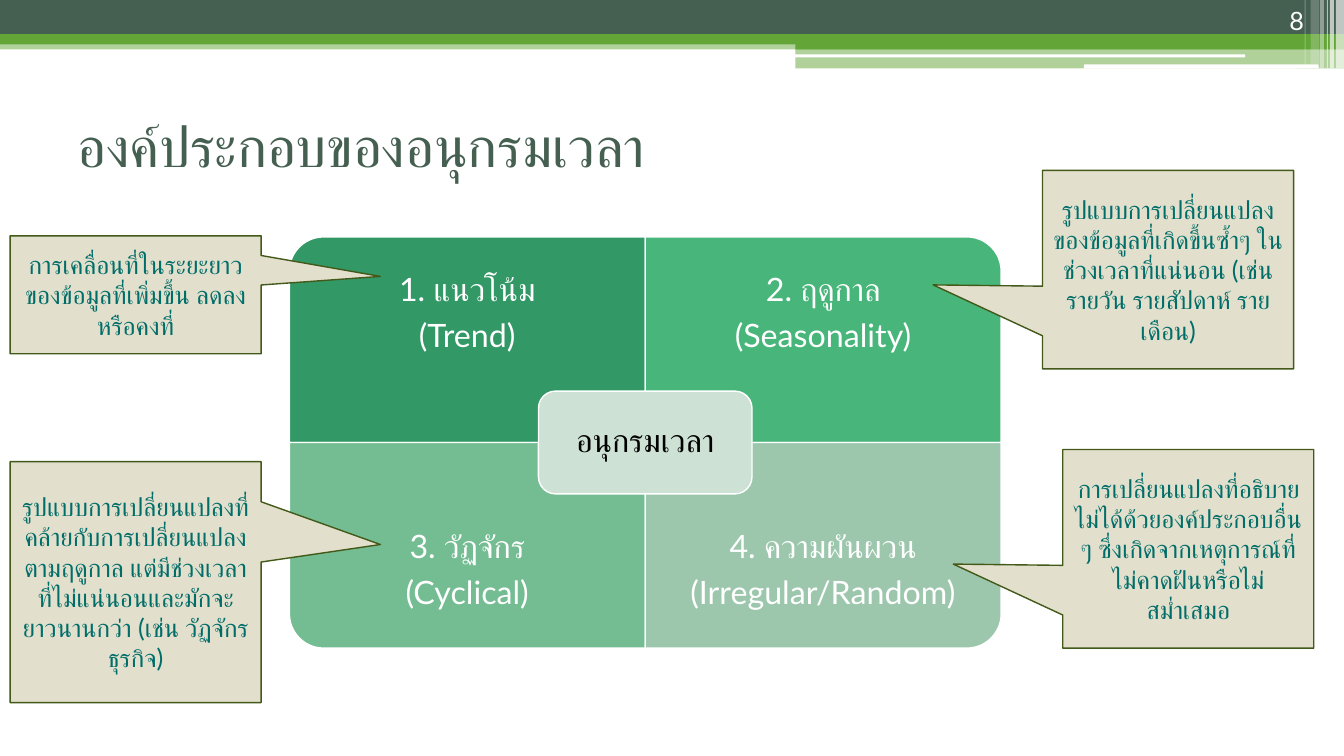
from lxml import etree
from pptx import Presentation
from pptx import util as u
from pptx.dml import color
from pptx.enum import shapes, text
from pptx.oxml import ns

SLIDE_W, SLIDE_H = 13.33, 7.5
FONT = "Lato"
WHITE, DARK, GREEN = "FFFFFF", "455F51", "63A537"
SHAPE = shapes.MSO_SHAPE
ALIGN = text.PP_ALIGN
ANCHOR = text.MSO_ANCHOR

heading = "องค์ประกอบของอนุกรมเวลา"
page_number = "8"
hub_label = "อนุกรมเวลา"

components = [
    {"cell": (0, 0), "turn": 270, "fill": "329865", "lines": ["1. แนวโน้ม", "(Trend)"]},
    {"cell": (1, 0), "turn": 0, "fill": "48B57A", "lines": ["2. ฤดูกาล", "(Seasonality)"]},
    {"cell": (0, 1), "turn": 180, "fill": "74BC92", "lines": ["3. วัฏจักร", "(Cyclical)"]},
    {"cell": (1, 1), "turn": 90, "fill": "9CC7AD",
     "lines": ["4. ความผันผวน", "(Irregular/Random)"]},
]

LEFT_TIP, RIGHT_TIP = (0.975, -0.156), (-0.936, 0.077)
explanations = [
    (0.1, 2.34, 1.17, LEFT_TIP,
     "การเคลื่อนที่ในระยะยาวของข้อมูลที่เพิ่มขึ้น ลดลง หรือคงที่"),
    (0.1, 4.58, 2.39, LEFT_TIP,
     "รูปแบบการเปลี่ยนแปลงที่คล้ายกับการเปลี่ยนแปลงตามฤดูกาล "
     "แต่มีช่วงเวลาที่ไม่แน่นอนและมักจะยาวนานกว่า (เช่น วัฏจักรธุรกิจ)"),
    (10.34, 1.69, 1.97, RIGHT_TIP,
     "รูปแบบการเปลี่ยนแปลงของข้อมูลที่เกิดขึ้นซ้ำๆ ในช่วงเวลาที่แน่นอน "
     "(เช่น รายวัน รายสัปดาห์ รายเดือน)"),
    (10.54, 4.46, 1.97, RIGHT_TIP,
     "การเปลี่ยนแปลงที่อธิบายไม่ได้ด้วยองค์ประกอบอื่น ๆ "
     "ซึ่งเกิดจากเหตุการณ์ที่ไม่คาดฝันหรือไม่สม่ำเสมอ"),
]
EXPLANATION_W = 2.49

SPLIT = 7.89
header_bands = [
    (0, 0.4, SLIDE_W, 0.09, GREEN, 50),
    (0, 0, SLIDE_W, 0.34, DARK, 100),
    (0, 0.34, SLIDE_W, 0.1, GREEN, 100),
    (SPLIT, 0.39, SLIDE_W - SPLIT, 0.1, GREEN, 100),
    (SPLIT, 0.48, SLIDE_W - SPLIT, 0.2, GREEN, 50),
]
header_slits = [(7.88, 0.54, 4.47, 0.03), (10.75, 0.64, 2.33, 0.04)]
header_stripes = [
    (13.25, 0.08, 0.68, 65), (13.19, 0.04, 0.68, 65), (13.16, 0.01, 0.68, 60),
    (13.09, 0.04, 0.68, 40), (13, 0.08, 0.64, 20), (12.94, 0.01, 0.64, 30),
]

MATRIX_X, MATRIX_Y, CELL_W, CELL_H = 2.87, 2.35, 3.53, 2.04
LABEL_H = CELL_H * 0.75
HUB_W, HUB_H = CELL_W * 0.6, CELL_H * 0.5


def rgb(value):
    return color.RGBColor.from_string(value)


def add_block(slide, preset, box, fill, opacity=100, line=None):
    block = slide.shapes.add_shape(preset, *map(u.Inches, box))
    block.shadow.inherit = False
    block.fill.solid()
    block.fill.fore_color.rgb = rgb(fill)
    if opacity < 100:
        tint = block.fill._xPr.find(".//" + ns.qn("a:srgbClr"))
        etree.SubElement(tint, ns.qn("a:alpha"), val=str(opacity * 1000))
    if line:
        block.line.color.rgb = rgb(line)
        block.line.width = u.Pt(1)
    else:
        block.line.fill.background()
    return block


def write(shape, lines, size, ink, align=ALIGN.CENTER, anchor=ANCHOR.MIDDLE,
          inset=None, stacked=False):
    frame = shape.text_frame
    frame.word_wrap = True
    frame.vertical_anchor = anchor
    if inset is not None:
        frame.margin_left = frame.margin_right = u.Inches(inset)
        frame.margin_top = frame.margin_bottom = u.Inches(inset)
    frame.text = "\n".join(lines)
    for paragraph in frame.paragraphs:
        paragraph.alignment = align
        paragraph.font.name = FONT
        paragraph.font.size = u.Pt(size)
        paragraph.font.color.rgb = rgb(ink)
        if stacked:
            paragraph.line_spacing = 0.9
            paragraph.space_after = u.Pt(size * 0.35)


def add_label(slide, box, lines, size, ink, **layout):
    write(slide.shapes.add_textbox(*map(u.Inches, box)), lines, size, ink, **layout)


def draw_header(slide):
    for *box, fill, opacity in header_bands:
        add_block(slide, SHAPE.RECTANGLE, box, fill, opacity)
    for box in header_slits:
        add_block(slide, SHAPE.ROUNDED_RECTANGLE, box, WHITE)
    for x, width, height, opacity in header_stripes:
        add_block(slide, SHAPE.RECTANGLE, (x, 0, width, height), WHITE, opacity)
    add_label(slide, (0.67, 0.85, 12, 1.17), [heading], 40, DARK, align=ALIGN.LEFT)


def draw_matrix(slide):
    for component in components:
        column, row = component["cell"]
        x, y = MATRIX_X + column * CELL_W, MATRIX_Y + row * CELL_H
        sideways = component["turn"] % 180 == 90
        width, height = (CELL_H, CELL_W) if sideways else (CELL_W, CELL_H)
        box = (x + (CELL_W - width) / 2, y + (CELL_H - height) / 2, width, height)
        quadrant = add_block(slide, SHAPE.ROUND_1_RECTANGLE, box,
                             component["fill"], line=WHITE)
        quadrant.rotation = component["turn"]
        label_y = y + row * (CELL_H - LABEL_H)
        add_label(slide, (x, label_y, CELL_W, LABEL_H), component["lines"], 23, WHITE,
                  inset=0.18, stacked=True)
    hub_box = (MATRIX_X + CELL_W - HUB_W / 2, MATRIX_Y + CELL_H - HUB_H / 2, HUB_W, HUB_H)
    hub = add_block(slide, SHAPE.ROUNDED_RECTANGLE, hub_box, "CEE1D5", line=WHITE)
    write(hub, [hub_label], 23, "000000", inset=0.1, stacked=True)


def draw_explanations(slide):
    for x, y, height, tip, wording in explanations:
        callout = add_block(slide, SHAPE.RECTANGULAR_CALLOUT,
                            (x, y, EXPLANATION_W, height), "E2DFCC", line="435919")
        callout.adjustments[0], callout.adjustments[1] = tip
        write(callout, [wording], 18, "006D69")


def main():
    deck = Presentation()
    deck.slide_width, deck.slide_height = u.Inches(SLIDE_W), u.Inches(SLIDE_H)
    slide = deck.slides.add_slide(deck.slide_layouts[6])
    draw_header(slide)
    draw_matrix(slide)
    add_label(slide, (11.92, 0, 1.11, 0.4), [page_number], 18, WHITE,
              align=ALIGN.RIGHT, anchor=ANCHOR.BOTTOM)
    draw_explanations(slide)
    deck.save("out.pptx")


if __name__ == "__main__":
    main()
